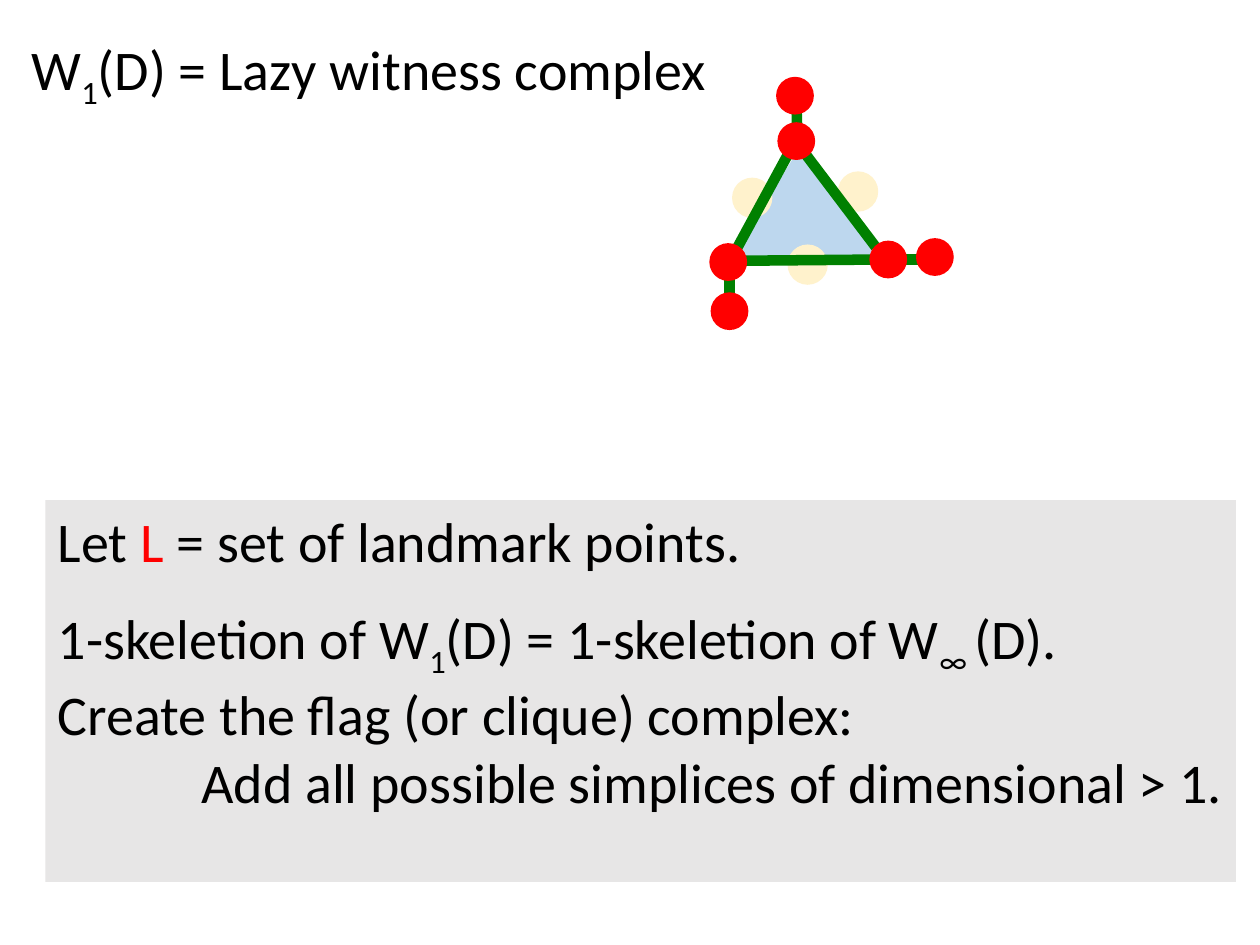
from lxml import etree
from pptx import Presentation
from pptx import util as u
from pptx.dml.color import RGBColor
from pptx.enum import shapes, text
from pptx.oxml.ns import qn

EMU_PER_PX = 9144  # 100 px to the inch
FONT = "Calibri"
COLORS = {
    "text": "000000",
    "landmark": "FF0000",
    "witness": "FFF2CC",
    "edge": "008000",
    "face": "BDD7EE",
    "panel": "E7E6E6",
}
LANDMARK_SIZE, WITNESS_SIZE = 30, 32

# Left and top of each disc
WITNESSES = [(625, 194), (665, 136), (581, 141)]
LANDMARKS = [(563, 193), (690, 191), (617, 97), (727, 189), (616, 61), (564, 232)]
# Start and end of each edge
EDGES = [
    ((579, 241), (579, 204)),
    ((633, 114), (632, 77)),
    ((743, 206), (706, 206)),
    ((696, 206), (585, 207)),
    ((695, 196), (633, 114)),
    ((630, 114), (579, 208)),
]


def px(*lengths):
    return [u.Emu(length * EMU_PER_PX) for length in lengths]


def color(name):
    return RGBColor.from_string(COLORS[name])


def add_shape(slide, kind, box, fill):
    shape = slide.shapes.add_shape(kind, *px(*box))
    shape.shadow.inherit = False
    shape.fill.solid()
    shape.fill.fore_color.rgb = color(fill)
    shape.line.fill.background()
    return shape


def add_discs(slide, corners, size, fill):
    for left, top in corners:
        add_shape(slide, shapes.MSO_SHAPE.OVAL, (left, top, size, size), fill)


def add_edge(slide, start, end):
    edge = slide.shapes.add_connector(
        shapes.MSO_CONNECTOR.STRAIGHT, *px(*start, *end))
    edge.line.color.rgb = color("edge")
    edge.line.width = u.Pt(6)
    etree.SubElement(edge._element.spPr, qn("a:effectLst"))


def write_text(paragraph, words, size=32, fill="text", subscript=False):
    run = paragraph.add_run()
    run.text = words
    run.font.name = FONT
    run.font.size = u.Pt(size)
    run.font.color.rgb = color(fill)
    if subscript:
        run.font._element.set("baseline", "-25000")


def format_frame(frame, wrap):
    frame.word_wrap = wrap
    frame.auto_size = text.MSO_AUTO_SIZE.NONE
    frame.vertical_anchor = text.MSO_ANCHOR.TOP


def add_title(slide):
    title = slide.shapes.title
    title.left, title.top, title.width, title.height = px(15, 22, 569, 64)
    format_frame(title.text_frame, wrap=False)
    paragraph = title.text_frame.paragraphs[0]
    paragraph.alignment = text.PP_ALIGN.LEFT
    write_text(paragraph, "W")
    write_text(paragraph, "1", subscript=True)
    write_text(paragraph, "(D) = Lazy witness complex")


def add_definition(slide):
    panel = add_shape(slide, shapes.MSO_SHAPE.RECTANGLE, (36, 397, 945, 303), "panel")
    frame = panel.text_frame
    format_frame(frame, wrap=True)
    landmarks = frame.paragraphs[0]
    skeleton, flag, simplices = [frame.add_paragraph() for _ in range(3)]
    for paragraph in (landmarks, skeleton, flag):
        paragraph.alignment = text.PP_ALIGN.LEFT
    simplices.alignment = text.PP_ALIGN.RIGHT
    skeleton.space_before = u.Pt(17)

    write_text(landmarks, "Let ")
    write_text(landmarks, "L", fill="landmark")
    write_text(landmarks, " = set of landmark points.")

    write_text(skeleton, "1-skeletion of W")
    write_text(skeleton, "1", subscript=True)
    write_text(skeleton, "(D) = 1-skeletion of W")
    write_text(skeleton, "∞ ", subscript=True)
    write_text(skeleton, "(D).")

    write_text(flag, "Create the flag (or clique) complex:")
    write_text(simplices, "Add all possible simplices of dimensional > 1.")


def main():
    presentation = Presentation()
    presentation.slide_width, presentation.slide_height = px(1000, 750)
    slide = presentation.slides.add_slide(presentation.slide_layouts[5])

    # Filled face and wording
    add_shape(slide, shapes.MSO_SHAPE.ISOSCELES_TRIANGLE, (579, 112, 118, 94), "face")
    add_title(slide)
    add_definition(slide)

    # Witness points, edges, then landmark points on top
    add_discs(slide, WITNESSES, WITNESS_SIZE, "witness")
    for start, end in EDGES:
        add_edge(slide, start, end)
    add_discs(slide, LANDMARKS, LANDMARK_SIZE, "landmark")

    presentation.save("out.pptx")


if __name__ == "__main__":
    main()
